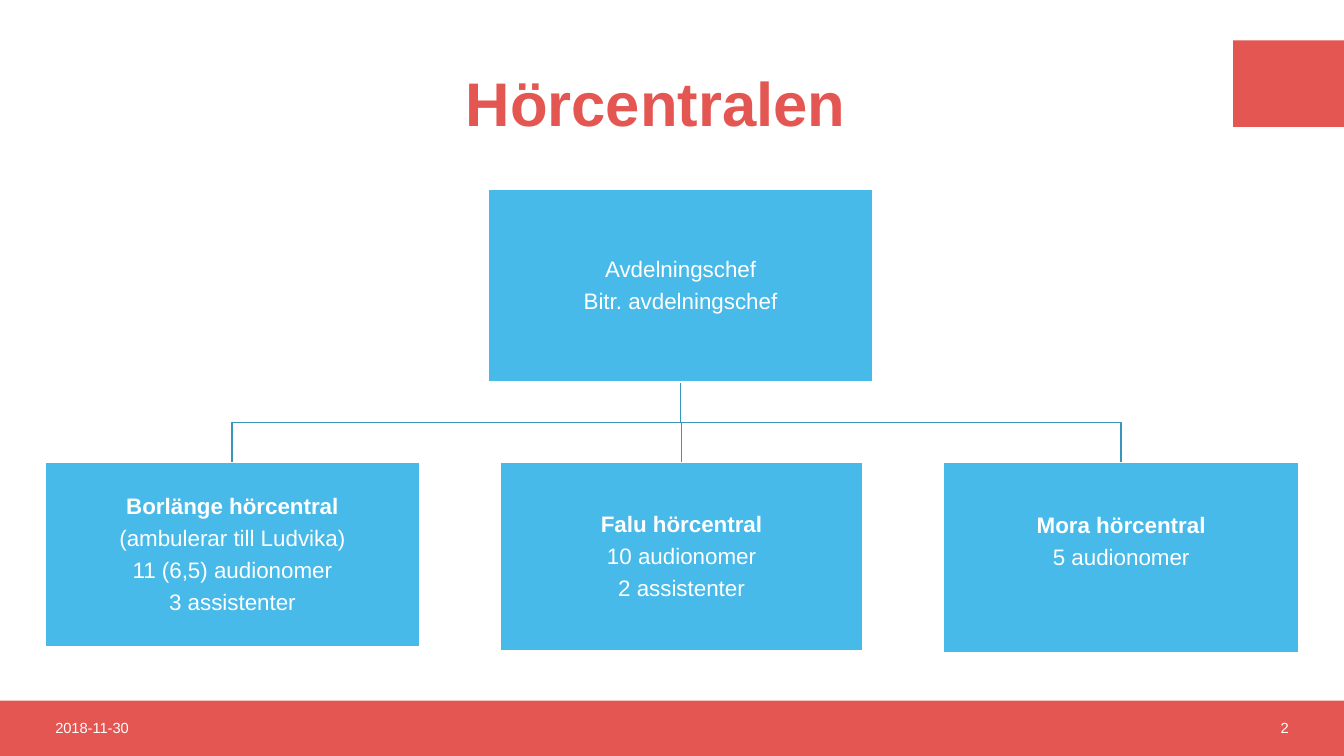
from pptx import Presentation
from pptx.dml.color import RGBColor
from pptx.enum.shapes import MSO_SHAPE
from pptx.enum.text import MSO_ANCHOR, PP_ALIGN
from pptx.util import Inches, Pt

RED = RGBColor(0xE4, 0x56, 0x51)
BLUE = RGBColor(0x47, 0xBA, 0xEA)
LINE_BLUE = RGBColor(0x39, 0x95, 0xBB)
WHITE = RGBColor(0xFF, 0xFF, 0xFF)
RECTANGLE = MSO_SHAPE.RECTANGLE
MIDDLE = MSO_ANCHOR.MIDDLE
LEFT, CENTER, RIGHT = PP_ALIGN.LEFT, PP_ALIGN.CENTER, PP_ALIGN.RIGHT

deck = Presentation()
deck.slide_width, deck.slide_height = Inches(13.33), Inches(7.5)
page = deck.slides.add_slide(deck.slide_layouts[5])


def add_rectangle(left, top, width, height, fill):
    box = page.shapes.add_shape(RECTANGLE, Inches(left), Inches(top), Inches(width), Inches(height))
    box.shadow.inherit = False
    box.fill.solid()
    box.fill.fore_color.rgb = fill
    box.line.fill.background()
    return box


def format_text(para, size, color, alignment):
    para.alignment = alignment
    para.font.name = "Arial"
    para.font.size = Pt(size)
    para.font.color.rgb = color


# Red footer band and corner block
add_rectangle(0, 6.95, 13.33, 0.55, RED)
add_rectangle(12.23, 0.4, 1.1, 0.86, RED)

# Title
title = page.shapes.title
title.left, title.top = Inches(0.45), Inches(0.4)
title.width, title.height = Inches(11.61), Inches(1.32)
title.text_frame.text = "Hörcentralen"
title.text_frame.vertical_anchor = MIDDLE
title.text_frame.margin_left = Inches(0.6)
para = title.text_frame.paragraphs[0]
format_text(para, 44, RED, CENTER)
para.line_spacing = 0.9
para.font.bold = True

# Date and page number
for left, text, alignment in [(0.45, "2018-11-30", LEFT), (9.88, "2", RIGHT)]:
    box = page.shapes.add_textbox(Inches(left), Inches(6.95), Inches(3), Inches(0.54))
    box.text_frame.word_wrap = True
    box.text_frame.vertical_anchor = MIDDLE
    box.text_frame.text = text
    format_text(box.text_frame.paragraphs[0], 10.5, WHITE, alignment)

# Bent lines from the chief down to each unit
CHIEF_X, CHIEF_BOTTOM, BAR_Y, UNIT_TOP = 6.75, 3.79, 4.19, 4.59
for unit_x in (11.12, 6.76, 2.3):
    builder = page.shapes.build_freeform(Inches(CHIEF_X), Inches(CHIEF_BOTTOM))
    bends = [(CHIEF_X, BAR_Y), (unit_x, BAR_Y), (unit_x, UNIT_TOP)]
    builder.add_line_segments([(Inches(x), Inches(y)) for x, y in bends], close=False)
    branch = builder.convert_to_shape()
    branch.shadow.inherit = False
    branch.fill.background()
    branch.line.color.rgb = LINE_BLUE
    branch.line.width = Pt(1)

# Organisation boxes: position, bottom margin, bold heading, lines
ORGANISATION = [
    ((4.84, 1.88, 3.82, 1.91), 0.01, False, ["Avdelningschef", "Bitr. avdelningschef"]),
    ((0.45, UNIT_TOP, 3.71, 1.83), 0.01, True,
     ["Borlänge hörcentral", "(ambulerar till Ludvika)", "11 (6,5) audionomer", "3 assistenter"]),
    ((4.96, UNIT_TOP, 3.6, 1.87), 0.01, True, ["Falu hörcentral", "10 audionomer", "2 assistenter"]),
    ((9.36, UNIT_TOP, 3.52, 1.89), 0.33, True, ["Mora hörcentral", "5 audionomer"]),
]
for position, bottom_margin, bold_heading, lines in ORGANISATION:
    box = add_rectangle(*position, BLUE)
    box.line.color.rgb = WHITE
    box.line.width = Pt(1)
    frame = box.text_frame
    frame.word_wrap = True
    frame.vertical_anchor = MIDDLE
    frame.margin_left = frame.margin_right = frame.margin_top = Inches(0.01)
    frame.margin_bottom = Inches(bottom_margin)
    frame.text = "\n".join(lines)
    for number, para in enumerate(frame.paragraphs):
        format_text(para, 16, WHITE, CENTER)
        para.line_spacing = 0.9
        para.space_after = Pt(5.6)
        para.font.bold = bold_heading and number == 0

deck.save("out.pptx")
